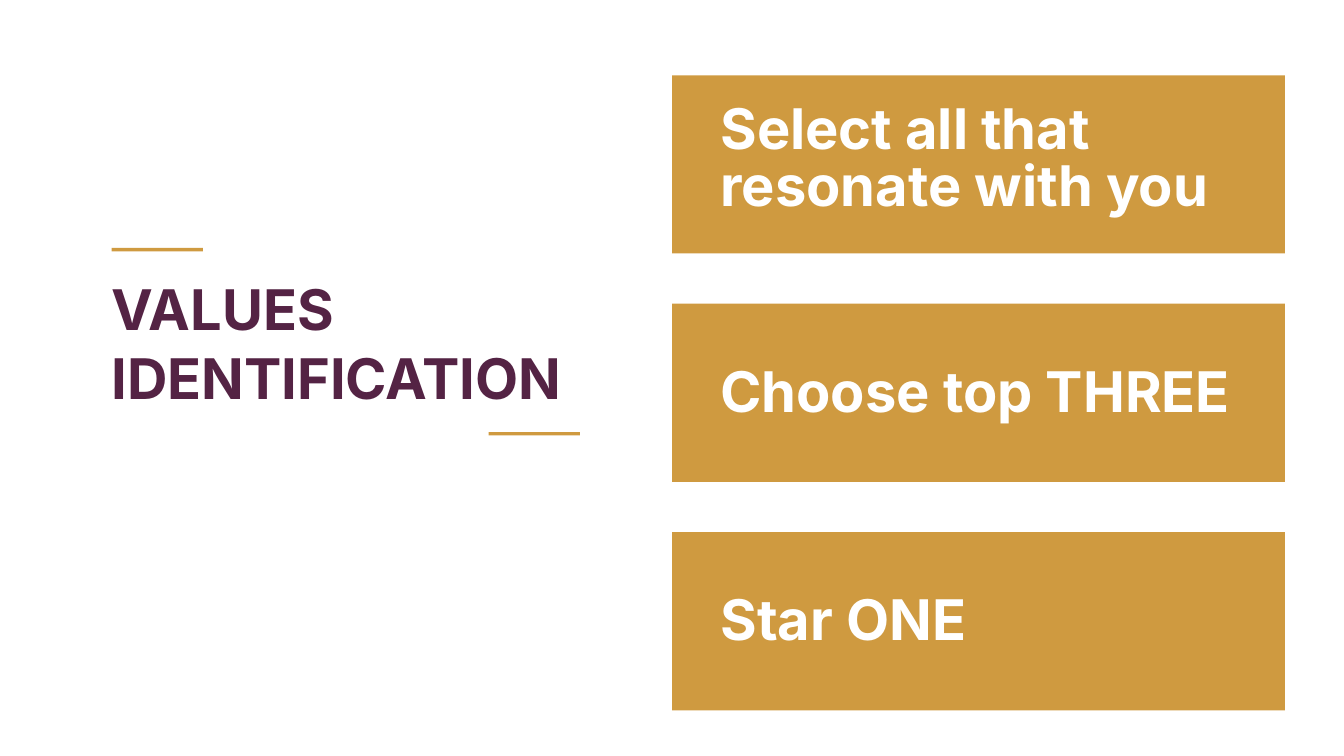
"""Build the values identification slide."""
from pptx import Presentation
from pptx.dml.color import RGBColor
from pptx.enum.shapes import MSO_SHAPE
from pptx.enum.text import MSO_ANCHOR, MSO_AUTO_SIZE, PP_ALIGN
from pptx.util import Pt

PX = 9144
HEX = {"plum": "542344", "gold": "CF9A40", "white": "FFFFFF"}

TITLE = "VALUES IDENTIFICATION"
STEPS = [
    ("Select all that resonate with you", 42, 888, 173),
    ("Choose top THREE", 93, 799, 89),
    ("Star ONE", 93, 799, 89),
]
RULES = [(166, 369), (727, 643)]
LEFT, TOP, WIDE, HIGH, PITCH = 1000, 112, 912, 265, 340
INDENT = 72


def paint(slide, *box):
    shape = slide.shapes.add_shape(MSO_SHAPE.RECTANGLE, *(n * PX for n in box))
    shape.shadow.inherit = False
    shape.fill.solid()
    shape.fill.fore_color.rgb = RGBColor.from_string(HEX["gold"])
    shape.line.fill.background()


def write(shape, text, color, space):
    frame = shape.text_frame
    frame.text = text
    frame.word_wrap = True
    frame.auto_size = MSO_AUTO_SIZE.NONE
    frame.vertical_anchor = MSO_ANCHOR.TOP
    frame.margin_left = frame.margin_right = 0
    frame.margin_top = frame.margin_bottom = 0
    para = frame.paragraphs[0]
    para.alignment = PP_ALIGN.LEFT
    para.line_spacing = Pt(space)
    font = para.runs[0].font
    font.name, font.size, font.bold = "Inter", Pt(60), True
    font.color.rgb = RGBColor.from_string(HEX[color])


def main():
    deck = Presentation()
    deck.slide_width, deck.slide_height = 2000 * PX, 1125 * PX
    slide = deck.slides.add_slide(deck.slide_layouts[5])

    title = slide.shapes.title
    title.left, title.top, title.width, title.height = (
        n * PX for n in (166, 405, 888, 206))
    write(title, TITLE, "plum", 74.4)

    for x, y in RULES:
        paint(slide, x, y, 136, 5)

    for i, (text, drop, wide, high) in enumerate(STEPS):
        y = TOP + i * PITCH
        paint(slide, LEFT, y, WIDE, HIGH)
        box = (LEFT + INDENT, y + drop, wide, high)
        label = slide.shapes.add_textbox(*(n * PX for n in box))
        write(label, text, "white", 61.2)

    deck.save("out.pptx")


if __name__ == "__main__":
    main()
